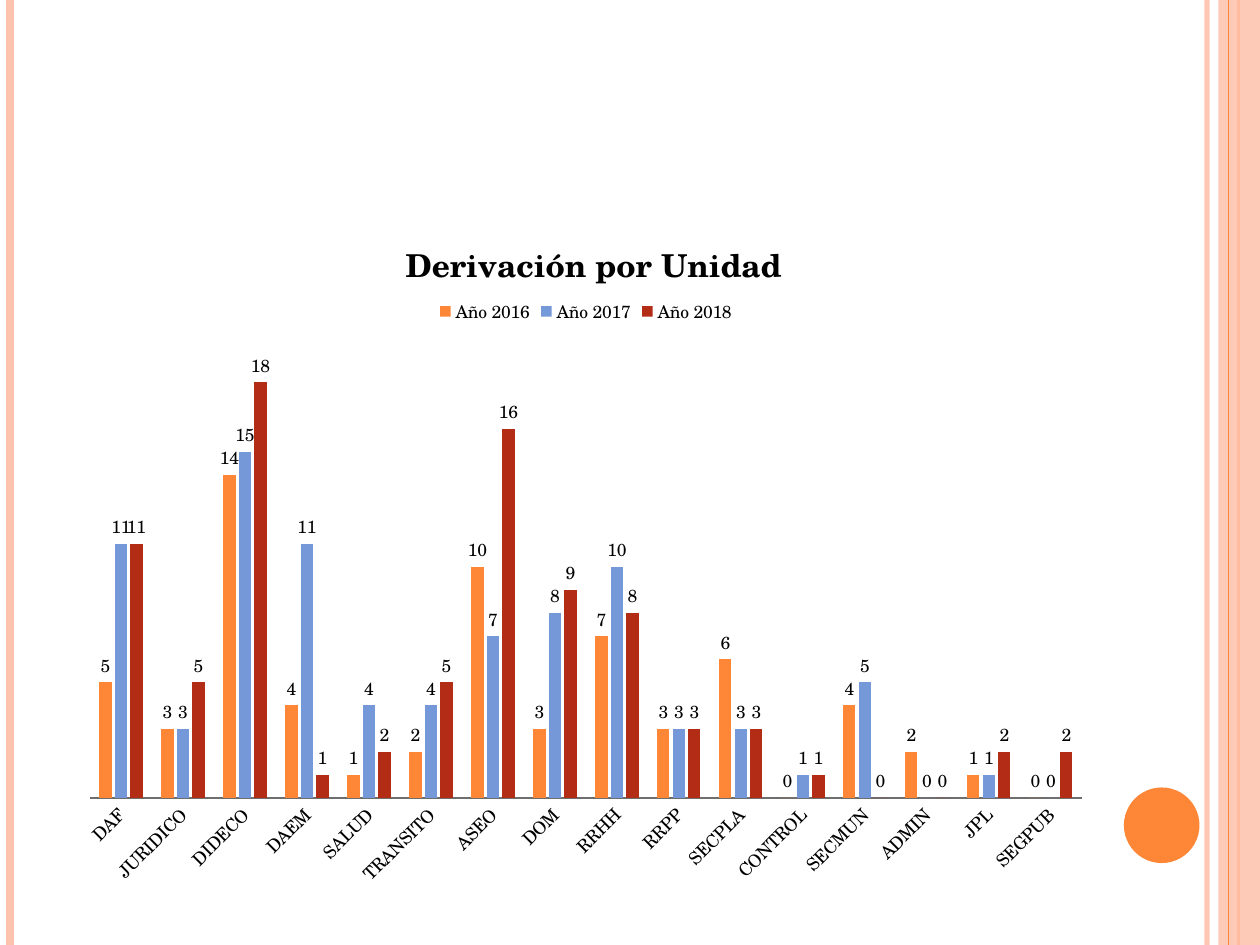
from dataclasses import dataclass

from lxml import etree
from pptx import Presentation
from pptx import util as u
from pptx.chart.data import CategoryChartData
from pptx.dml.color import RGBColor
from pptx.enum import chart as charts, shapes
from pptx.oxml.ns import qn

FONT = "TeX Gyre Schola"
BLACK, GREY = "000000", "6E6E6E"
ORANGE, PINK = "FE8637", "FEC3AE"
UNITS = ["DAF", "JURIDICO", "DIDECO", "DAEM", "SALUD", "TRANSITO", "ASEO", "DOM",
         "RRHH", "RRPP", "SECPLA", "CONTROL", "SECMUN", "ADMIN", "JPL", "SEGPUB"]


@dataclass
class Stripe:
    x: float
    color: str
    width: float
    alpha: int = 100


@dataclass
class Year:
    name: str
    color: str
    referrals: list[int]


STRIPES_BELOW = [Stripe(9.58, PINK, 3, 93), Stripe(0.08, PINK, 4.5), Stripe(9.83, ORANGE, 1.5)]
STRIPE_ABOVE = Stripe(9.75, ORANGE, 0.75)
YEARS = [
    Year("Año 2016", ORANGE, [5, 3, 14, 4, 1, 2, 10, 3, 7, 3, 6, 0, 4, 2, 1, 0]),
    Year("Año 2017", "7598D9", [11, 3, 15, 11, 4, 4, 7, 8, 10, 3, 3, 1, 5, 0, 1, 0]),
    Year("Año 2018", "B32C16", [11, 5, 18, 1, 2, 5, 16, 9, 8, 3, 3, 1, 0, 0, 2, 2]),
]


def paint(target, color: str, alpha: int = 100) -> None:
    """Give a fill a solid colour, with opacity in percent."""
    target.solid()
    target.fore_color.rgb = RGBColor.from_string(color)
    if alpha < 100:
        for node in target._xPr.iter(qn("a:srgbClr")):
            etree.SubElement(node, qn("a:alpha")).set("val", str(alpha * 1000))


def style_font(font, size: float, bold: bool = False) -> None:
    font.name, font.size, font.bold = FONT, u.Pt(size), bold
    paint(font.fill, BLACK)


def draw_stripe(page, stripe: Stripe) -> None:
    x = u.Inches(stripe.x)
    line = page.shapes.add_connector(shapes.MSO_CONNECTOR.STRAIGHT, x, 0, x, u.Inches(7.5))
    line.line.width = u.Pt(stripe.width)
    paint(line.line.fill, stripe.color, stripe.alpha)
    etree.SubElement(line._element.spPr, qn("a:effectLst"))


def draw_shape(page, kind, left: float, top: float, width: float, height: float,
               color: str, alpha: int = 100) -> None:
    shape = page.shapes.add_shape(kind, *map(u.Inches, (left, top, width, height)))
    shape.shadow.inherit = False
    shape.line.fill.background()
    paint(shape.fill, color, alpha)


def place(parent, index: int, **fractions: float) -> None:
    """Set a manual layout, in fractions of the chart, as child number index."""
    for old in parent.findall(qn("c:layout")):
        parent.remove(old)
    layout = etree.Element(qn("c:layout"))
    manual = etree.SubElement(layout, qn("c:manualLayout"))
    if parent.tag == qn("c:plotArea"):
        etree.SubElement(manual, qn("c:layoutTarget")).set("val", "inner")
    for mode in ("xMode", "yMode"):
        etree.SubElement(manual, qn(f"c:{mode}")).set("val", "edge")
    for key, value in fractions.items():
        etree.SubElement(manual, qn(f"c:{key}")).set("val", str(value))
    parent.insert(index, layout)


def draw_chart(page) -> None:
    data = CategoryChartData(number_format="0")
    data.categories = UNITS
    for year in YEARS:
        data.add_series(year.name, year.referrals)
    frame = page.shapes.add_chart(charts.XL_CHART_TYPE.COLUMN_CLUSTERED,
                                  *map(u.Inches, (0.55, 1.56, 8.2, 5.55)), data)
    chart = frame.chart
    style_font(chart.font, 10)

    chart.has_title = True
    span = chart.chart_title.text_frame.paragraphs[0].add_run()
    span.text = "Derivación por Unidad"
    style_font(span.font, 18, bold=True)
    place(chart.chart_title._element, 1, x=0.32, y=0.05)

    chart.has_legend = True
    chart.legend.position = charts.XL_LEGEND_POSITION.TOP
    chart.legend.include_in_layout = False
    style_font(chart.legend.font, 10)

    plot = chart.plots[0]
    plot.gap_width, plot.overlap = 150, -25
    plot.vary_by_categories = False
    for series, year in zip(plot.series, YEARS):
        paint(series.format.fill, year.color)
        series.invert_if_negative = False
        labels = series.data_labels
        labels.show_value = True
        labels.position = charts.XL_LABEL_POSITION.OUTSIDE_END
        style_font(labels.font, 10)

    values = chart.value_axis
    values.minimum_scale, values.maximum_scale = 0, 20
    values.has_major_gridlines = False
    values.visible = False

    units = chart.category_axis
    units.major_tick_mark = charts.XL_TICK_MARK.NONE
    units.format.line.width = u.Pt(1)
    paint(units.format.line.fill, GREY)
    style_font(units.tick_labels.font, 10)
    body = units._element.find(qn("c:txPr")).find(qn("a:bodyPr"))
    body.set("rot", str(-45 * 60000))
    body.set("vert", "horz")
    place(chart._chartSpace.chart.plotArea, 0, x=0.02, y=0.2, w=0.96, h=0.66)


def main() -> None:
    deck = Presentation()
    deck.slide_width, deck.slide_height = u.Inches(10), u.Inches(7.5)
    page = deck.slides.add_slide(deck.slide_layouts[6])
    paint(page.background.fill, "FFFFFF")
    for stripe in STRIPES_BELOW:
        draw_stripe(page, stripe)
    draw_shape(page, shapes.MSO_SHAPE.RECTANGLE, 9.67, 0, 0.33, 7.5, PINK, 87)
    draw_stripe(page, STRIPE_ABOVE)
    draw_shape(page, shapes.MSO_SHAPE.OVAL, 8.92, 6.25, 0.6, 0.6, ORANGE)
    draw_chart(page)
    deck.save("out.pptx")


if __name__ == "__main__":
    main()
